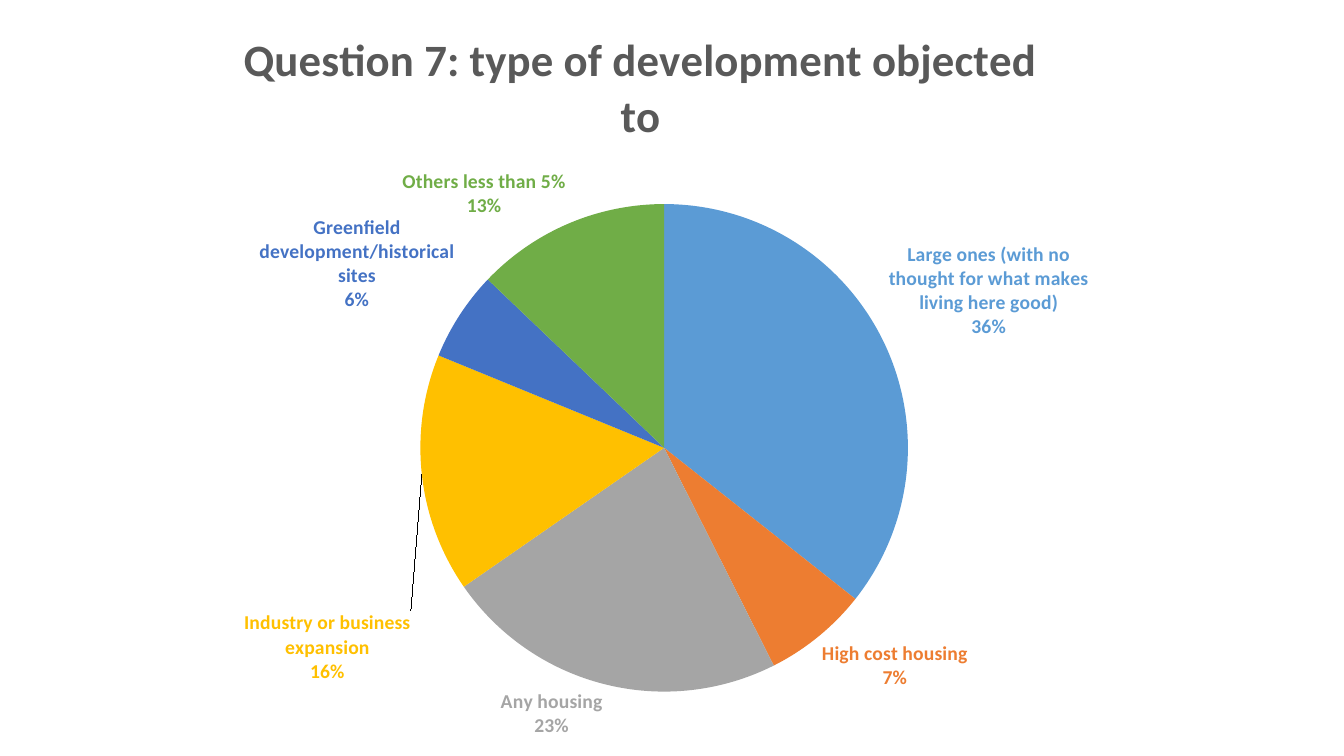
from lxml import etree
from pptx import Presentation
from pptx.chart.data import CategoryChartData
from pptx.dml.color import RGBColor
from pptx.enum.chart import XL_CHART_TYPE as Kind, XL_LABEL_POSITION as Spot
from pptx.oxml.ns import qn
from pptx.util import Pt

TITLE = "Question 7: type of development objected to"
SLICES = [
    ("Large ones (with no thought for what makes living here good)", 36, "5B9BD5"),
    ("High cost housing", 7, "ED7D31"),
    ("Any housing", 23, "A5A5A5"),
    ("Industry or business expansion", 16, "FFC000"),
    ("Greenfield development/historical sites", 6, "4472C4"),
    ("Others less than 5%", 13, "70AD47"),
]
MOVED = {3: {"x": -0.005, "y": 0.18}}  # label shifts, as shares of the chart
PIE = {"layoutTarget": "inner", "xMode": "edge", "yMode": "edge",
       "x": 0.285, "y": 0.27, "w": 0.476, "h": 0.645}


def style(font, size, color):
    font.name, font.size, font.bold = "Calibri", Pt(size), True
    font.color.rgb = RGBColor.from_string(color)


def layout(parts):
    """Return a manual chart layout element."""
    outer = etree.Element(qn("c:layout"))
    inner = etree.SubElement(outer, qn("c:manualLayout"))
    for name, val in parts.items():
        etree.SubElement(inner, qn("c:" + name)).set("val", str(val))
    return outer


def show(label):
    """Make a label element show category and percent on separate lines."""
    for name, val in (("Val", 0), ("CatName", 1), ("Percent", 1)):
        label.find(qn("c:show" + name)).set("val", str(val))
    gap = etree.Element(qn("c:separator"))
    gap.text = "\n"
    label.find(qn("c:showBubbleSize")).addnext(gap)


def add_title(chart):
    chart.has_title = True
    frame = chart.chart_title.text_frame
    frame.text = TITLE
    style(frame.paragraphs[0].font, 32, "595959")
    chart.chart_title.include_in_layout = False


def add_labels(series):
    labels = series.data_labels
    labels.position = Spot.OUTSIDE_END
    style(labels.font, 14, SLICES[0][2])
    for i, (_, _, color) in enumerate(SLICES):
        point = series.points[i]
        point.format.fill.solid()
        point.format.fill.fore_color.rgb = RGBColor.from_string(color)
        style(point.data_label.font, 14, color)
        point.data_label.position = Spot.OUTSIDE_END
    group = series._element.find(qn("c:dLbls"))
    show(group)
    for i, label in enumerate(group.findall(qn("c:dLbl"))):
        show(label)
        if i in MOVED:
            label.find(qn("c:idx")).addnext(layout(MOVED[i]))


def add_pie(slide, left, top, width, height):
    data = CategoryChartData()
    data.categories = [name for name, _, _ in SLICES]
    data.add_series("Series 1", [val for _, val, _ in SLICES])
    chart = slide.shapes.add_chart(
        Kind.PIE, Pt(left), Pt(top), Pt(width), Pt(height), data).chart
    chart.font.name, chart.font.size = "Calibri", Pt(10)
    chart.has_legend = False
    add_title(chart)
    plot = chart.plots[0]
    plot.vary_by_categories = True
    add_labels(plot.series[0])
    area = plot._element.getparent()
    old = area.find(qn("c:layout"))
    if old is not None:
        area.remove(old)
    area.insert(0, layout(PIE))


def main():
    deck = Presentation()
    deck.slide_width, deck.slide_height = Pt(960), Pt(540)
    slide = deck.slides.add_slide(deck.slide_layouts[6])
    add_pie(slide, 91.44, 0, 732.24, 540)
    deck.save("out.pptx")


if __name__ == "__main__":
    main()
